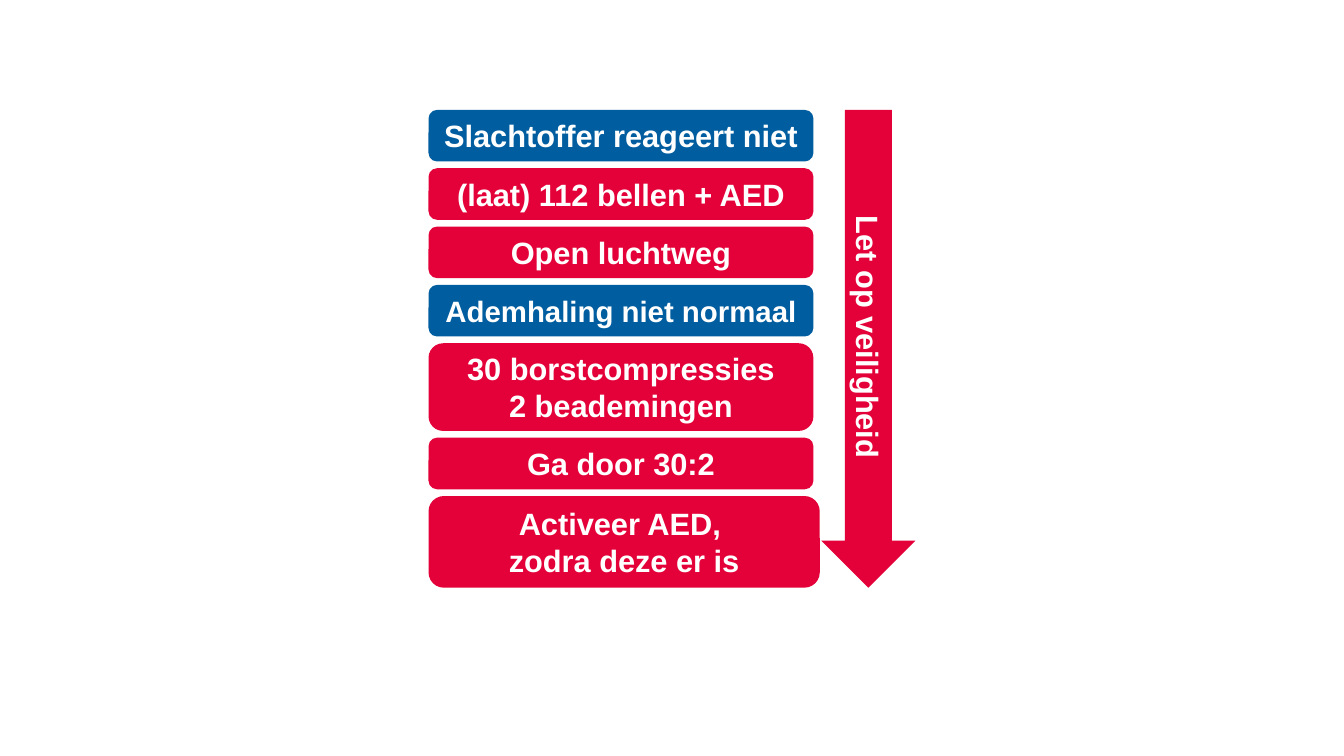
from pptx import Presentation
from pptx.dml.color import RGBColor as RGB
from pptx.enum.shapes import MSO_SHAPE as Shape
from pptx.enum.text import MSO_ANCHOR as Anchor, PP_ALIGN as Align
from pptx.util import Cm, Pt

THEME = {
    "red": RGB(0xE4, 0x00, 0x38),
    "blue": RGB(0x00, 0x5D, 0x9F),
    "white": RGB(0xFF, 0xFF, 0xFF),
    "font": "Arial",
    "size": 22,
    "small": 21,
}


def add_block(s, text, kind, x, y, w, h, fill="red", size="size", vert=None):
    sp = s.shapes.add_shape(kind, Cm(x), Cm(y), Cm(w), Cm(h))
    sp.shadow.inherit = False
    sp.fill.solid()
    sp.fill.fore_color.rgb = THEME[fill]
    sp.line.fill.background()
    tf = sp.text_frame
    tf.word_wrap = True
    tf.vertical_anchor = Anchor.MIDDLE
    if vert:
        tf._txBody.bodyPr.set("vert", vert)
    tf.text = text
    for p in tf.paragraphs:
        p.alignment = Align.CENTER
        for r in p.runs:
            r.font.name = THEME["font"]
            r.font.size = Pt(THEME[size])
            r.font.bold = True
            r.font.color.rgb = THEME["white"]
    return sp


prs = Presentation()
prs.slide_width, prs.slide_height = Cm(33.87), Cm(19.05)
s = prs.slides.add_slide(prs.slide_layouts[6])
s.background.fill.solid()
s.background.fill.fore_color.rgb = THEME["white"]

left, top, gap = 10.8, 2.77, 0.17
steps = [
    ("Slachtoffer reageert niet", 9.7, 1.3, "blue", "size"),
    ("(laat) 112 bellen + AED", 9.7, 1.3, "red", "size"),
    ("Open luchtweg", 9.7, 1.3, "red", "size"),
    ("Ademhaling niet normaal", 9.7, 1.3, "blue", "small"),
    ("30 borstcompressies\n2 beademingen", 9.7, 2.21, "red", "size"),
    ("Ga door 30:2", 9.7, 1.3, "red", "size"),
    ("Activeer AED, \nzodra deze er is", 9.86, 2.31, "red", "size"),
]

y = top
for text, width, height, fill, size in steps:
    add_block(s, text, Shape.ROUNDED_RECTANGLE, left, y, width, height, fill, size)
    y += height + gap

add_block(s, "Let op veiligheid", Shape.DOWN_ARROW, 20.7, top, 2.37, y - gap - top,
          vert="vert")

prs.save("out.pptx")
